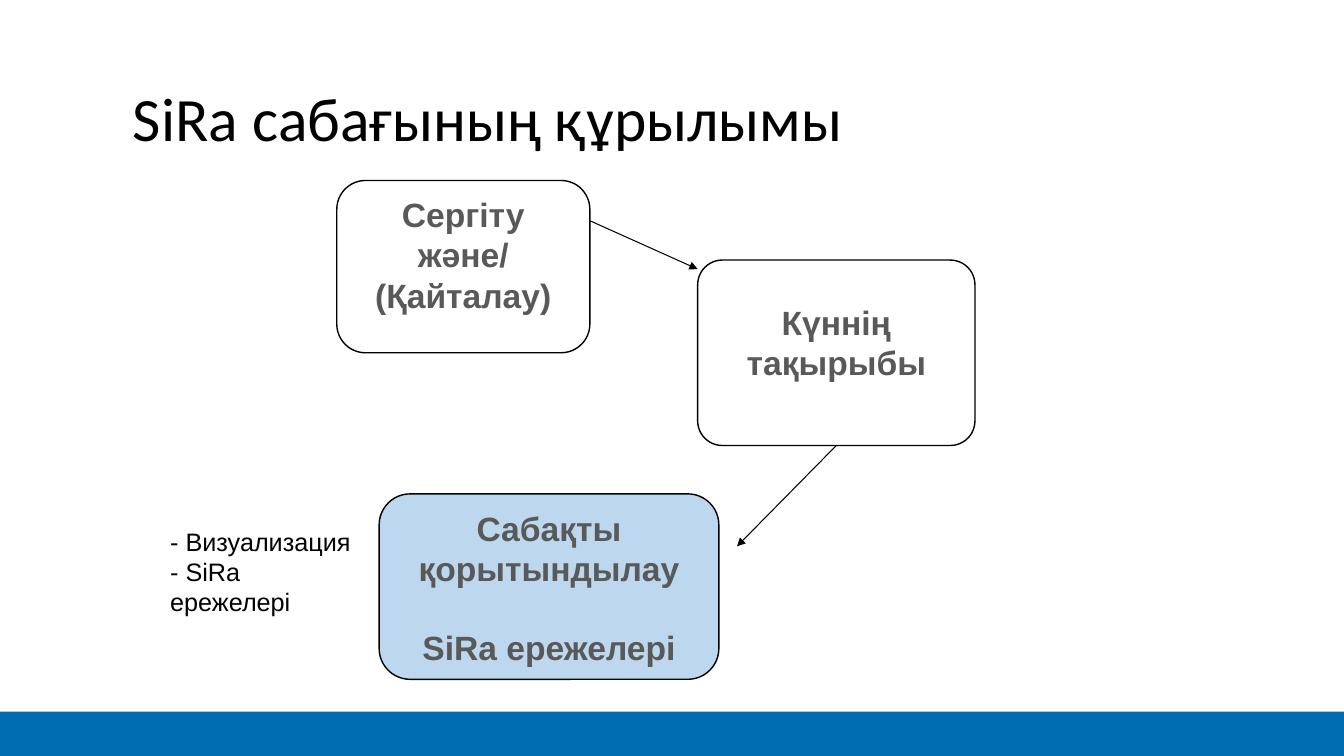
from lxml import etree
from pptx import Presentation, util as u
from pptx.dml.color import RGBColor
from pptx.enum import shapes, text
from pptx.oxml.ns import qn

THEME = {
    "black": "000000", "white": "FFFFFF", "grey": "595959",
    "bar": "006DB1", "summary": "BDD7EE",
    "title_font": "Calibri", "body_font": "Arial",
    "title": 44, "stage": 24, "note": 18,
}

deck = Presentation()
deck.slide_width, deck.slide_height = u.Inches(13.33), u.Inches(7.5)
slide = deck.slides.add_slide(deck.slide_layouts[6])


def area(*percents):
    sides = (deck.slide_width, deck.slide_height) * 2
    return [round(side * share / 100) for side, share in zip(sides, percents)]


def write(paragraph, words, size, font="body_font", color="grey", bold=False):
    run = paragraph.add_run()
    run.text = words
    run.font.size = u.Pt(THEME[size])
    run.font.name = THEME[font]
    run.font.bold = bold
    run.font.color.rgb = RGBColor.from_string(THEME[color])


bar = slide.shapes.add_shape(shapes.MSO_SHAPE.RECTANGLE, *area(0, 94.13, 100, 5.87))
bar.shadow.inherit = False
bar.fill.solid()
bar.fill.fore_color.rgb = RGBColor.from_string(THEME["bar"])
bar.line.fill.background()

heading = slide.shapes.add_textbox(*area(9.15, 8.27, 83.27, 15.6)).text_frame
heading.word_wrap = True
heading.vertical_anchor = text.MSO_ANCHOR.MIDDLE
heading.paragraphs[0].line_spacing = 0.9
write(heading.paragraphs[0], "SiRa сабағының құрылымы", "title", "title_font", "black")

stages = [
    ((25.06, 23.87, 18.83, 22.8), 0.167, "white", 0.05, ["Сергіту және/ (Қайталау)"]),
    ((51.91, 34.4, 20.63, 24.53), 0.133, "white", 0.34, ["Күннің тақырыбы"]),
    ((28.21, 65.33, 25.28, 24.53), 0.167, "summary", 0.05,
     ["Сабақты қорытындылау", "SiRa ережелері"]),
]
stage_boxes = []
for place, corner, fill, top_inset, lines in stages:
    stage = slide.shapes.add_shape(shapes.MSO_SHAPE.ROUNDED_RECTANGLE, *area(*place))
    stage.adjustments[0] = corner
    stage.shadow.inherit = False
    stage.fill.solid()
    stage.fill.fore_color.rgb = RGBColor.from_string(THEME[fill])
    stage.line.color.rgb = RGBColor.from_string(THEME["black"])
    stage.line.width = u.Pt(1)
    frame = stage.text_frame
    frame.word_wrap = True
    frame.vertical_anchor = text.MSO_ANCHOR.TOP
    frame.margin_top = u.Inches(top_inset)
    for index, words in enumerate(lines):
        paragraph = frame.add_paragraph() if index else frame.paragraphs[0]
        paragraph.alignment = text.PP_ALIGN.CENTER
        if index:
            paragraph.space_before = u.Pt(THEME["stage"] * 1.15)
        write(paragraph, words, "stage", bold=True)
    stage_boxes.append(stage)

warm_up, topic, summary = stage_boxes
steps = []
for ends in [(43.89, 29.2, 51.91, 35.6), (62.2, 58.93, 54.84, 72.27)]:
    step = slide.shapes.add_connector(shapes.MSO_CONNECTOR.STRAIGHT, *area(*ends))
    step.line.color.rgb = RGBColor.from_string(THEME["black"])
    step.line.width = u.Pt(0.75)
    etree.SubElement(step.line._get_or_add_ln(), qn("a:tailEnd"), type="triangle")
    etree.SubElement(step._element.spPr, qn("a:effectLst"))
    steps.append(step)
steps[1].begin_connect(topic, 2)

notes = slide.shapes.add_textbox(*area(11.93, 68.93, 16.05, 9.47)).text_frame
notes.word_wrap = False
notes.auto_size = text.MSO_AUTO_SIZE.SHAPE_TO_FIT_TEXT
for index, words in enumerate(["- Визуализация", "- SiRa ережелері"]):
    paragraph = notes.add_paragraph() if index else notes.paragraphs[0]
    write(paragraph, words, "note", color="black")

deck.save("out.pptx")
